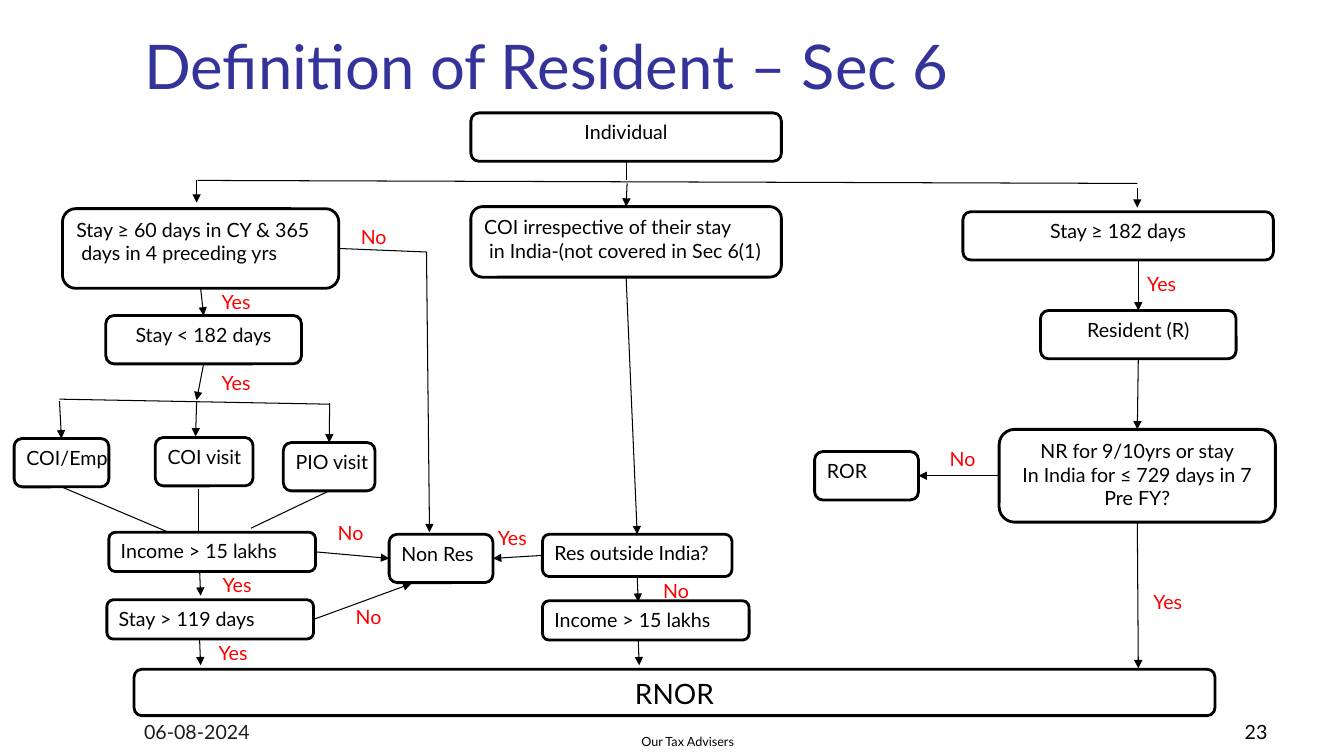
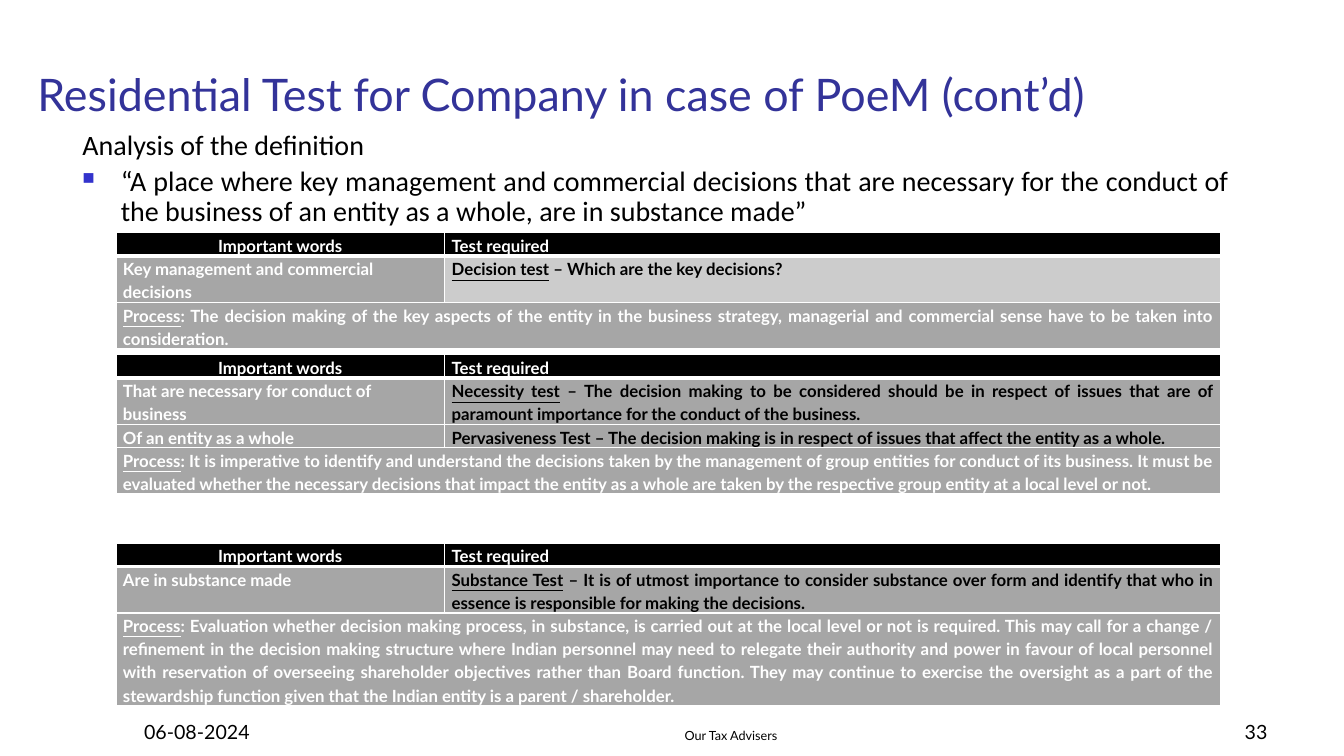
from lxml.etree import SubElement
from pptx import Presentation
from pptx.dml.color import RGBColor
from pptx.enum.shapes import MSO_CONNECTOR, MSO_SHAPE
from pptx.enum.text import MSO_ANCHOR, MSO_AUTO_SIZE, PP_ALIGN
from pptx.oxml.ns import qn
from pptx.util import Inches, Pt

CELL = 0.1
FONT = "Lato"
BLACK, WHITE, RED = "000000", "FFFFFF", "FF0000"
NAVY, BLUE, GREY, PALE = "333399", "3333CC", "A6A6A6", "CCCCCC"
LEFT, MID, RIGHT, JUST = PP_ALIGN.LEFT, PP_ALIGN.CENTER, PP_ALIGN.RIGHT, PP_ALIGN.JUSTIFY
TOP, LOW = MSO_ANCHOR.TOP, MSO_ANCHOR.BOTTOM
BELOW, ABOVE, WEST, EAST = 2, 0, 1, 3


def color(code):
    return RGBColor.from_string(code)


def grid(*cells):
    return [Inches(n * CELL) for n in cells]


def child(node, tag, **attrs):
    return SubElement(node, qn(tag), attrs)


class Deck:
    def __init__(self):
        self.file = Presentation()
        self.file.slide_width, self.file.slide_height = Inches(13.33), Inches(7.5)
        self.slide = None

    def page(self, title, area, size):
        self.slide = self.file.slides.add_slide(self.file.slide_layouts[5])
        head = self.slide.shapes.title
        head.left, head.top, head.width, head.height = grid(*area)
        self.fill(head.text_frame, title, size, NAVY, anchor=LOW)

    def style(self, para, size, ink, align, font=FONT):
        para.alignment = align
        for run in para.runs:
            run.font.name, run.font.size = font, Pt(size)
            run.font.color.rgb = color(ink)

    def fill(self, frame, text, size=14, ink=BLACK, align=LEFT, anchor=TOP, wrap=True, font=FONT):
        frame.text = text
        frame.word_wrap = wrap
        frame.auto_size = MSO_AUTO_SIZE.NONE
        frame.vertical_anchor = anchor
        for para in frame.paragraphs:
            self.style(para, size, ink, align, font)

    def text(self, area, text, **look):
        frame = self.slide.shapes.add_textbox(*grid(*area)).text_frame
        self.fill(frame, text, **look)
        return frame

    def foot(self, number, left, top, ink):
        self.text((13.3, 69.2, 27.8, 5), "06-08-2024", ink=ink, anchor=LOW)
        self.text((left, top, 55.6, 5), "Our Tax Advisers", size=9, align=MID, anchor=LOW)
        self.text((98.9, 69.2, 27.8, 5), number, align=RIGHT, anchor=LOW)

    def box(self, area, text, align=LEFT, size=14):
        shape = self.slide.shapes.add_shape(MSO_SHAPE.ROUNDED_RECTANGLE, *grid(*area))
        shape.shadow.inherit = False
        shape.fill.solid()
        shape.fill.fore_color.rgb = color(WHITE)
        shape.line.color.rgb = color(BLACK)
        shape.line.width = Pt(2)
        self.fill(shape.text_frame, text, size, align=align, wrap=False)
        return shape

    def line(self, start, end, boxes, arrow=True):
        def spot(point):
            if not isinstance(point[0], str):
                return grid(*point)
            shape, side = boxes[point[0]], point[1]
            across = {WEST: 0, EAST: 2}.get(side, 1)
            down = {ABOVE: 0, BELOW: 2}.get(side, 1)
            return [shape.left + shape.width * across // 2, shape.top + shape.height * down // 2]

        link = self.slide.shapes.add_connector(MSO_CONNECTOR.STRAIGHT, *spot(start), *spot(end))
        link.line.color.rgb = color(BLACK)
        link.line.width = Pt(0.75)
        if arrow:
            child(link.line._get_or_add_ln(), "a:tailEnd", type="triangle")
        child(link._element.spPr, "a:effectLst")
        for point, join in ((start, link.begin_connect), (end, link.end_connect)):
            if isinstance(point[0], str):
                join(boxes[point[0]], point[1])

    def cell(self, cell, text, back, ink, align, row):
        cell.margin_left = cell.margin_right = Inches(0.07)
        cell.margin_top = cell.margin_bottom = 0
        props = cell._tc.get_or_add_tcPr()
        thick = {0: "a:lnB", 1: "a:lnT"}.get(row)
        for tag in ("a:lnL", "a:lnR", "a:lnT", "a:lnB"):
            edge = child(props, tag, w=str(Pt(3 if tag == thick else 1)))
            child(child(edge, "a:solidFill"), "a:srgbClr", val=WHITE)
        cell.fill.solid()
        cell.fill.fore_color.rgb = color(back)
        para = cell.text_frame.paragraphs[0]
        lead, mark, rest = text.partition("|")
        para.text = lead
        if mark:
            para.runs[0].font.underline = True
            para.add_run().text = rest
        para.line_spacing = 1.15
        self.style(para, 12, ink, align)
        for run in para.runs:
            run.font.bold = True

    def table(self, top, tests, process, lines, back=GREY):
        rows = [("Important words", "Test required"), *tests, (process, "")]
        step = 2.3
        frame = self.slide.shapes.add_table(len(rows), 2, *grid(11.5, top, 109.6, step * sum(lines)))
        table = frame.table
        table.first_row = table.horz_banding = False
        for col, width in zip(table.columns, grid(32.6, 77)):
            col.width = width
        last = len(rows) - 1
        for i, (word, test) in enumerate(rows):
            table.rows[i].height = grid(step * lines[i])[0]
            first, second = table.cell(i, 0), table.cell(i, 1)
            if i == last:
                first.merge(second)
            self.cell(first, word, BLACK if i == 0 else GREY, WHITE,
                      {0: MID, last: JUST}.get(i, LEFT), i)
            if i < last:
                self.cell(second, test, back if i else BLACK, BLACK if i else WHITE,
                          JUST if i else LEFT, i)


def chart(deck):
    deck.page("Definition of Resident – Sec 6", (13.3, -1.9, 113.6, 12.5), 44)
    nodes = {
        "person": ((46.7, 11.2, 30.8, 4.8), "Individual", MID),
        "sixty": ((6.2, 20.7, 27.4, 7.9), "Stay ≥ 60 days in CY & 365\n days in 4 preceding yrs"),
        "under": ((10.5, 31.3, 19.4, 4.8), "Stay < 182 days", MID),
        "coi": ((46.7, 20.5, 30.8, 7),
                "COI irrespective of their stay\n in India-(not covered in Sec 6(1)"),
        "over": ((95.5, 21, 30.8, 4.8), "Stay ≥ 182 days", MID),
        "abroad": ((53.8, 53, 18.8, 4.2), "Res outside India?"),
        "emp": ((1.4, 43.5, 9.4, 4.8), "COI/Emp"),
        "visit": ((15.4, 43.4, 9.7, 4.8), "COI visit"),
        "pio": ((28.1, 43.9, 9.1, 4.8), "PIO visit"),
        "income": ((10.8, 52.8, 20.5, 3.9), "Income > 15 lakhs"),
        "stay": ((10.6, 59.5, 20.5, 3.9), "Stay > 119 days"),
        "nonres": ((38.6, 53, 10.3, 4.8), "Non Res"),
        "lakhs": ((53.8, 59.6, 20.5, 3.9), "Income > 15 lakhs"),
        "res": ((103.2, 30.8, 19.4, 4.8), "Resident (R)", MID),
        "years": ((99.1, 42.6, 27.4, 9.2),
                  "NR for 9/10yrs or stay\nIn India for ≤ 729 days in 7\nPre FY?", MID),
        "ror": ((80.8, 44.8, 10.3, 4.8), "ROR"),
        "rnor": ((13.3, 66.4, 107.2, 4.6), "RNOR", MID, 20),
    }
    boxes = {name: deck.box(*node) for name, node in nodes.items()}

    plain = [
        (("person", BELOW), (62.1, 17.9)),
        ((19.6, 17.9), (112.8, 18.2)),
        ((5.9, 39.6), (32.7, 40.1)),
        (("emp", BELOW), (16.7, 52.8)),
        ((19.7, 48.5), (19.7, 52.8)),
        (("pio", BELOW), (24.9, 52.4)),
        (("sixty", EAST), (42.3, 25)),
    ]
    arrows = [
        ((19.5, 17.9), (19.5, 20.1)),
        ((112.8, 18.7), (112.8, 20.6)),
        ((62.2, 18.2), ("coi", ABOVE)),
        (("sixty", BELOW), ("under", ABOVE)),
        (("under", BELOW), (19.5, 39.7)),
        ((112.9, 25.7), ("res", ABOVE)),
        ((5.9, 39.8), ("emp", ABOVE)),
        ((19.5, 39.9), (19.4, 43.3)),
        ((32.7, 40), ("pio", ABOVE)),
        ((19.8, 56.6), (19.9, 59.1)),
        ((42.3, 25), (42.6, 52.8)),
        (("income", EAST), ("nonres", WEST)),
        (("coi", BELOW), ("abroad", ABOVE)),
        (("abroad", BELOW), (63.3, 59.7)),
        (("res", BELOW), ("years", ABOVE)),
        (("years", WEST), ("ror", EAST)),
        (("years", BELOW), (112.9, 66.3)),
        ((63.3, 63.5), (63.4, 66)),
        ((19.8, 63.5), (19.9, 66)),
        (("abroad", WEST), ("nonres", EAST)),
        (("stay", EAST), (40.8, 57.9)),
    ]
    for start, end in plain:
        deck.line(start, end, boxes, arrow=False)
    for start, end in arrows:
        deck.line(start, end, boxes)

    labels = {
        "Yes": [(21, 28.3), (112.8, 26.5), (21, 36.3), (21.1, 56.3),
                (113.4, 58), (48.4, 51.7), (20.7, 63.1)],
        "No": [(93.2, 43.8), (34.8, 21.8), (32.5, 51.2), (34.3, 59.5), (64.8, 56.9)],
    }
    for word, spots in labels.items():
        for left, top in spots:
            deck.text((left, top, 6, 3.4), word, ink=RED)
    deck.foot("23", 40.4, 69.8, "1C1C1C")


def tests(deck):
    deck.page("Residential Test for Company in case of PoeM (cont’d)", (2.7, 4.7, 128.5, 7.8), 32)
    body = deck.text((7.2, 12.5, 115.7, 10.5),
                     "Analysis of the definition\n“A place where key management and commercial "
                     "decisions that are necessary for the conduct of the business of an entity as "
                     "a whole, are in substance made”", size=20, align=JUST, font="Calibri")
    intro, quote = body.paragraphs
    props = quote._p.get_or_add_pPr()
    props.set("marL", str(Inches(0.38)))
    props.set("indent", str(-Inches(0.38)))
    child(child(props, "a:buClr"), "a:srgbClr", val=BLUE)
    child(props, "a:buSzPct", val="60000")
    child(props, "a:buChar", char="■")
    intro.line_spacing = quote.line_spacing = 0.9
    quote.space_before = Pt(4)

    deck.table(23.1, [
        ("Key management and commercial decisions",
         "Decision test| – Which are the key decisions?"),
    ], "Process|: The decision making of the key aspects of the entity in the business strategy, "
       "managerial and commercial sense have to be taken into consideration.", (1, 2, 2), PALE)
    deck.table(35.2, [
        ("That are necessary for conduct of business",
         "Necessity test| – The decision making to be considered should be in respect of issues "
         "that are of paramount importance for the conduct of the business."),
        ("Of an entity as a whole",
         "Pervasiveness Test| – The decision making is in respect of issues that affect the "
         "entity as a whole."),
    ], "Process|: It is imperative to identify and understand the decisions taken by the "
       "management of group entities for conduct of its business. It must be evaluated whether "
       "the necessary decisions that impact the entity as a whole are taken by the respective "
       "group entity at a local level or not.", (1, 2, 1, 2))
    deck.table(53.9, [
        ("Are in substance made",
         "Substance Test| – It is of utmost importance to consider substance over form and "
         "identify that who in essence is responsible for making the decisions."),
    ], "Process|: Evaluation whether decision making process, in substance, is carried out at "
       "the local level or not is required. This may call for a change / refinement in the "
       "decision making structure where Indian personnel may need to relegate their authority "
       "and power in favour of local personnel with reservation of overseeing shareholder "
       "objectives rather than Board function. They may continue to exercise the oversight as a "
       "part of the stewardship function given that the Indian entity is a parent / "
       "shareholder.", (1, 2, 4))
    deck.foot("33", 44.7, 69.2, BLACK)


def main():
    deck = Deck()
    chart(deck)
    tests(deck)
    deck.file.save("out.pptx")


if __name__ == "__main__":
    main()
